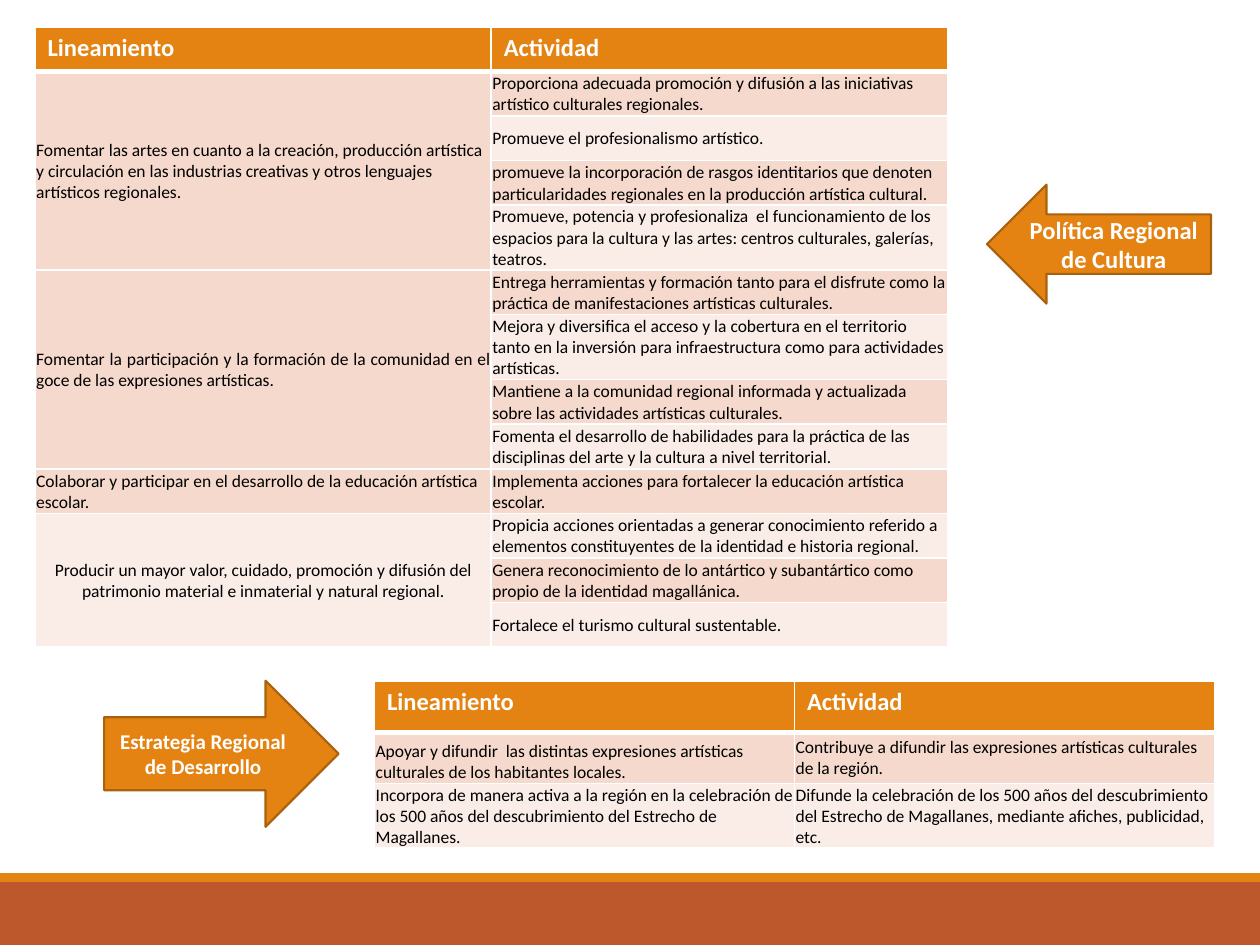
from lxml import etree
from pptx import Presentation
from pptx.dml.color import RGBColor
from pptx.enum import shapes, text
from pptx.oxml import ns
from pptx.util import Pt

WHITE = RGBColor(0xFF, 0xFF, 0xFF)
BLACK = RGBColor(0, 0, 0)
ORANGE = RGBColor(0xE4, 0x83, 0x12)
DARK_ORANGE = RGBColor(0xA9, 0x61, 0x0D)
RUST = RGBColor(0xBD, 0x58, 0x2C)
BANDS = (RGBColor(0xFA, 0xED, 0xE7), RGBColor(0xF5, 0xD9, 0xCC))

LEFT, CENTER, JUSTIFY = text.PP_ALIGN.LEFT, text.PP_ALIGN.CENTER, text.PP_ALIGN.JUSTIFY
TOP, MIDDLE, BOTTOM = text.MSO_ANCHOR.TOP, text.MSO_ANCHOR.MIDDLE, text.MSO_ANCHOR.BOTTOM

HEADINGS = ("Lineamiento", "Actividad")

CULTURE_POLICY = [
    ("Fomentar las artes en cuanto a la creación, producción artística y circulación en las "
     "industrias creativas y otros lenguajes artísticos regionales.", LEFT, MIDDLE, [
         "Proporciona adecuada promoción y difusión a las iniciativas artístico culturales regionales.",
         "Promueve el profesionalismo artístico.",
         "promueve la incorporación de rasgos identitarios que denoten particularidades regionales "
         "en la producción artística cultural.",
         "Promueve, potencia y profesionaliza  el funcionamiento de los espacios para la cultura y "
         "las artes: centros culturales, galerías, teatros."]),
    ("Fomentar la participación y la formación de la comunidad en el goce de las expresiones "
     "artísticas.", JUSTIFY, MIDDLE, [
         "Entrega herramientas y formación tanto para el disfrute como la práctica de "
         "manifestaciones artísticas culturales.",
         "Mejora y diversifica el acceso y la cobertura en el territorio tanto en la inversión "
         "para infraestructura como para actividades artísticas.",
         "Mantiene a la comunidad regional informada y actualizada sobre las actividades "
         "artísticas culturales.",
         "Fomenta el desarrollo de habilidades para la práctica de las disciplinas del arte y la "
         "cultura a nivel territorial."]),
    ("Colaborar y participar en el desarrollo de la educación artística escolar.", LEFT, MIDDLE, [
        "Implementa acciones para fortalecer la educación artística escolar."]),
    ("Producir un mayor valor, cuidado, promoción y difusión del patrimonio material e inmaterial "
     "y natural regional.", CENTER, MIDDLE, [
         "Propicia acciones orientadas a generar conocimiento referido a elementos constituyentes "
         "de la identidad e historia regional.",
         "Genera reconocimiento de lo antártico y subantártico como propio de la identidad "
         "magallánica.",
         "Fortalece el turismo cultural sustentable."]),
]

DEVELOPMENT_STRATEGY = [
    ("Apoyar y difundir  las distintas expresiones artísticas culturales de los habitantes "
     "locales.", LEFT, BOTTOM, [
         "Contribuye a difundir las expresiones artísticas culturales de la región."]),
    ("Incorpora de manera activa a la región en la celebración de los 500 años del descubrimiento "
     "del Estrecho de Magallanes.", LEFT, BOTTOM, [
         "Difunde la celebración de los 500 años del descubrimiento del Estrecho de Magallanes, "
         "mediante afiches, publicidad, etc."]),
]


def write_text(frame, content, size=10, color=BLACK, bold=False, align=LEFT):
    """Write one formatted paragraph into a text frame."""
    frame.word_wrap = True
    paragraph = frame.paragraphs[0]
    paragraph.alignment = align
    run = paragraph.add_run()
    run.text = content
    run.font.name = "Calibri"
    run.font.size = Pt(size)
    run.font.bold = bold
    run.font.color.rgb = color


def add_block(slide, kind, box, fill, line=None):
    """Add a filled preset shape without shadow."""
    shape = slide.shapes.add_shape(kind, *map(Pt, box))
    shape.shadow.inherit = False
    shape.fill.solid()
    shape.fill.fore_color.rgb = fill
    if line is None:
        shape.line.fill.background()
    else:
        shape.line.color.rgb = line
        shape.line.width = Pt(1.25)
    return shape


def add_arrow(slide, kind, box, label, size):
    """Add a labelled block arrow."""
    arrow = add_block(slide, kind, box, ORANGE, DARK_ORANGE)
    arrow.text_frame.vertical_anchor = MIDDLE
    write_text(arrow.text_frame, label, size=size, color=WHITE, bold=True, align=CENTER)


def add_footer(slide, box):
    """Add the footer band with its thin stripe on top."""
    left, top, width, height = box
    stripe = 5
    kind = shapes.MSO_SHAPE.RECTANGLE
    add_block(slide, kind, (left, top + stripe, width, height - stripe), RUST)
    add_block(slide, kind, (left, top, width, stripe), ORANGE)


def set_borders(cell, top=1, bottom=1):
    """Draw white borders around a cell."""
    properties = cell._tc.get_or_add_tcPr()
    widths = {"a:lnL": 1, "a:lnR": 1, "a:lnT": top, "a:lnB": bottom}
    for position, (tag, width) in enumerate(widths.items()):
        line = etree.Element(ns.qn(tag), w=str(Pt(width)))
        fill = etree.SubElement(line, ns.qn("a:solidFill"))
        etree.SubElement(fill, ns.qn("a:srgbClr"), val=str(WHITE))
        properties.insert(position, line)


def style_cell(cell, row):
    """Fill and border a cell according to its row."""
    cell.fill.solid()
    cell.fill.fore_color.rgb = BANDS[row % 2] if row else ORANGE
    set_borders(cell, top=3 if row == 1 else 1, bottom=1 if row else 3)


def write_body_cell(cell, content, align=LEFT, anchor=MIDDLE):
    """Write body text into a cell with tight margins."""
    cell.margin_left = cell.margin_right = cell.margin_top = Pt(0.7)
    cell.margin_bottom = 0
    cell.vertical_anchor = anchor
    write_text(cell.text_frame, content, align=align)


def add_guideline_table(slide, box, groups, row_height, tall_rows):
    """Add a table of guidelines, each spanning the rows of its activities."""
    count = 1 + sum(len(activities) for *_, activities in groups)
    table = slide.shapes.add_table(count, 2, *map(Pt, box)).table
    for column in table.columns:
        column.width = Pt(box[2] / 2)
    for index, row in enumerate(table.rows):
        row.height = Pt(37.1 if index in tall_rows else row_height)
        for cell in row.cells:
            style_cell(cell, index)
    for column, heading in enumerate(HEADINGS):
        cell = table.cell(0, column)
        cell.vertical_anchor = TOP
        write_text(cell.text_frame, heading, size=14, color=WHITE, bold=True)
    first = 1
    for guideline, align, anchor, activities in groups:
        last = first + len(activities) - 1
        if last > first:
            table.cell(first, 0).merge(table.cell(last, 0))
        write_body_cell(table.cell(first, 0), guideline, align, anchor)
        for row, activity in enumerate(activities, first):
            write_body_cell(table.cell(row, 1), activity)
        first = last + 1


def main():
    """Build and save the slide."""
    presentation = Presentation()
    presentation.slide_width, presentation.slide_height = Pt(720), Pt(540)
    slide = presentation.slides.add_slide(presentation.slide_layouts[6])
    add_footer(slide, (0, 499, 720, 41))
    add_guideline_table(slide, (20, 15.3, 521.4, 355), CULTURE_POLICY, 25.5, (4, 6))
    add_arrow(slide, shapes.MSO_SHAPE.LEFT_ARROW, (564, 105.5, 128, 68),
              "Política Regional de Cultura", 14)
    add_guideline_table(slide, (214, 389.2, 480, 95), DEVELOPMENT_STRATEGY, 29.2, (2,))
    add_arrow(slide, shapes.MSO_SHAPE.RIGHT_ARROW, (59.5, 389, 134, 83.5),
              "Estrategia Regional de Desarrollo", 12)
    presentation.save("out.pptx")


if __name__ == "__main__":
    main()
